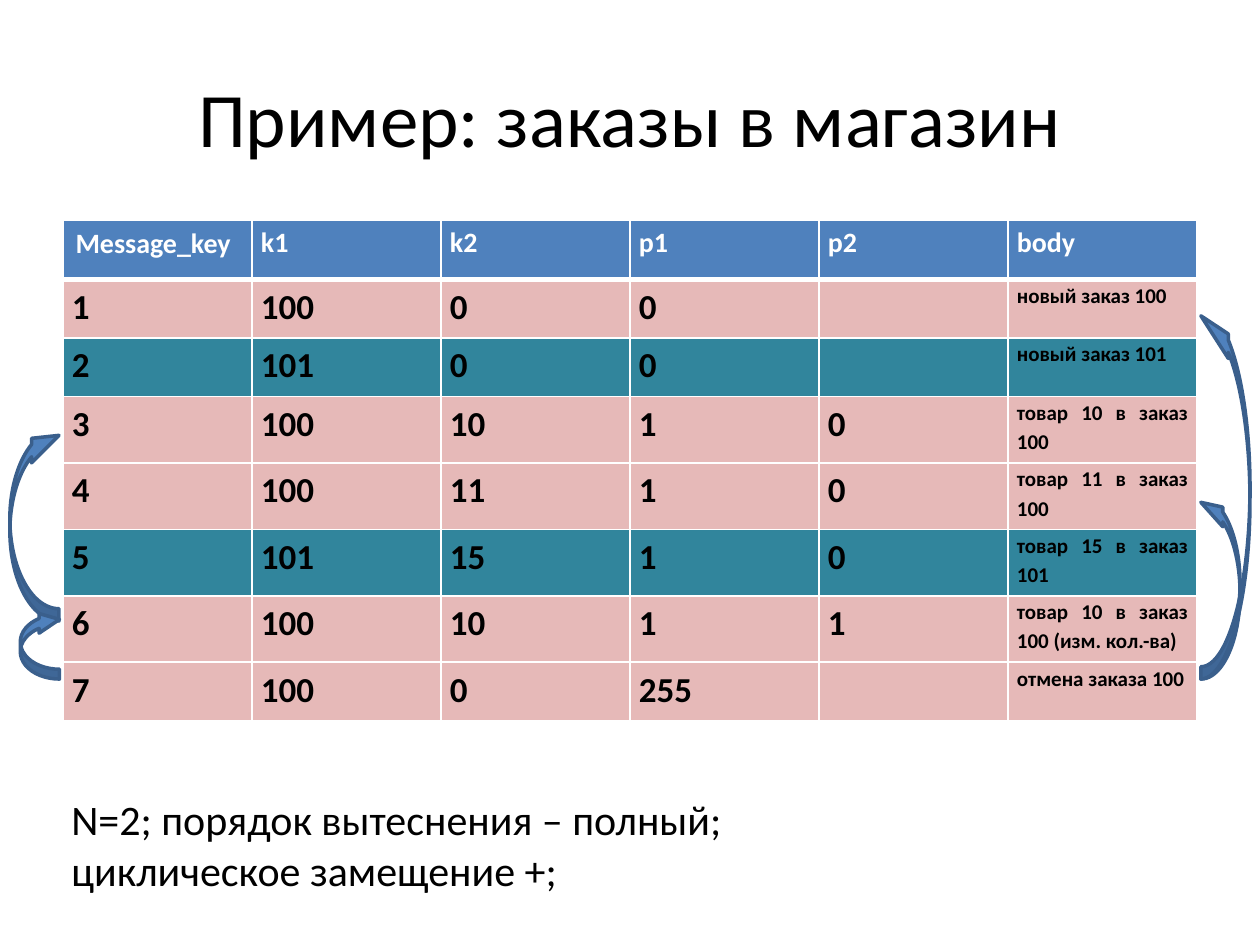
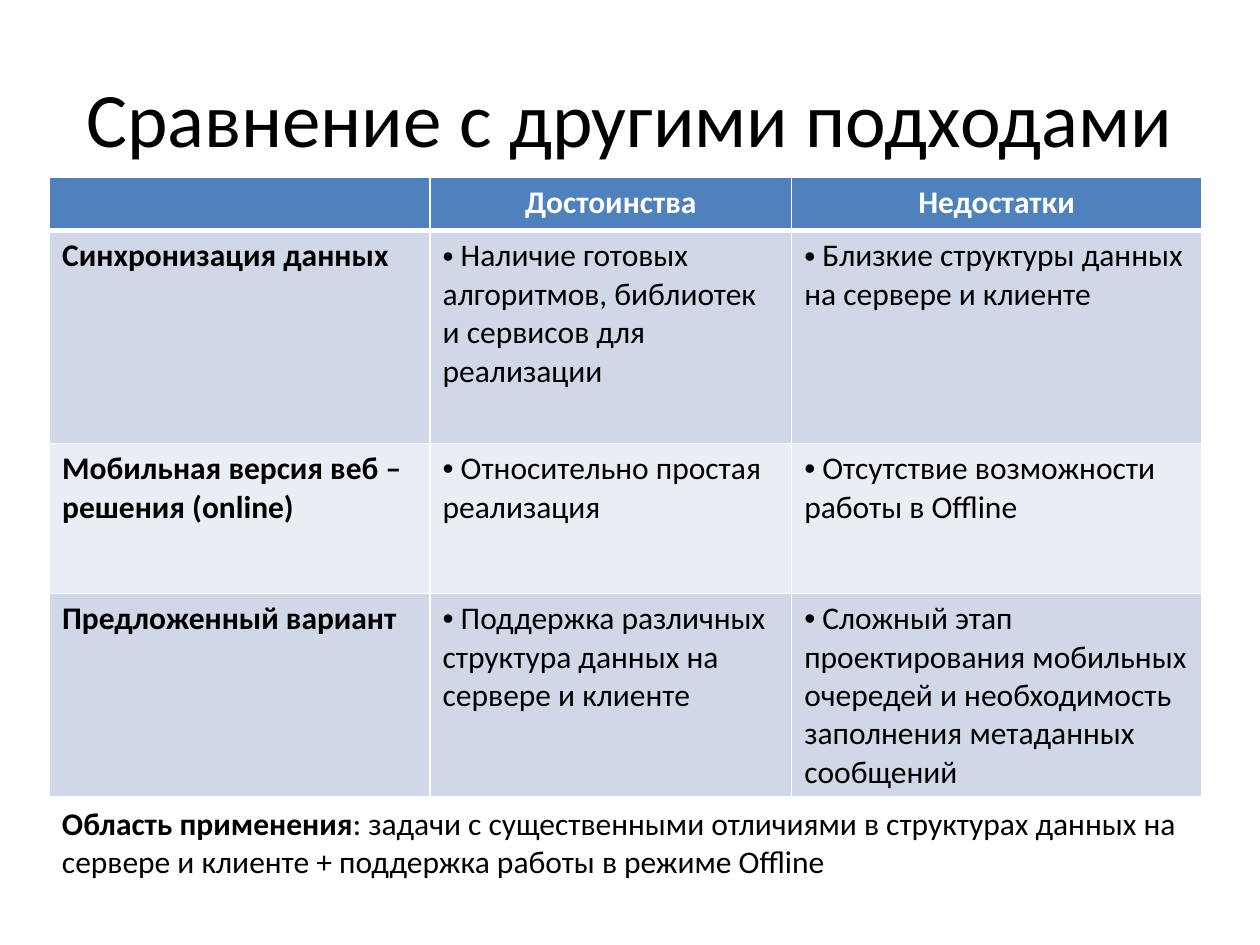
from lxml.etree import SubElement
from pptx import Presentation
from pptx.dml.color import RGBColor
from pptx.enum.shapes import MSO_SHAPE
from pptx.enum.text import MSO_ANCHOR, PP_ALIGN
from pptx.oxml.ns import qn
from pptx.util import Cm, Pt

FONT = "Calibri"
COLORS = {
    "text": "000000",
    "white": "FFFFFF",
    "accent": "4F81BD",
    "arrow_line": "3A5F8C",
    "order_100": "E6B9B8",
    "order_101": "31859C",
    "band_dark": "D0D8E8",
    "band_light": "E9EDF4",
}

ORDER_HEADS = ["Message_key", "k1", "k2", "p1", "p2", "body"]
ORDERS = [
    ["1", "100", "0", "0", "", "новый заказ 100"],
    ["2", "101", "0", "0", "", "новый заказ 101"],
    ["3", "100", "10", "1", "0", "товар 10 в заказ 100"],
    ["4", "100", "11", "1", "0", "товар 11 в заказ 100"],
    ["5", "101", "15", "1", "0", "товар 15 в заказ 101"],
    ["6", "100", "10", "1", "1", "товар 10 в заказ 100 (изм. кол.-ва)"],
    ["7", "100", "0", "255", "", "отмена заказа 100"],
]
ORDER_ROWS = [1.18] * 3 + [1.34] * 4 + [1.18]

# left, top, width, height, third adjustment, on the right side of the table
ARROWS = [
    (0.2, 8.53, 0.99, 3.99, 0.558, False),
    (24.21, 9.93, 0.79, 3.76, 0.558, True),
    (24.21, 6.12, 0.99, 7.57, 0.558, True),
    (0.41, 12.29, 0.79, 1.4, 0.52, False),
]

APPROACH_HEADS = ["", "Достоинства", "Недостатки"]
APPROACHES = [
    ["Синхронизация данных",
     "Наличие готовых алгоритмов, библиотек и сервисов для реализации",
     "Близкие структуры данных на сервере и клиенте"],
    ["Мобильная версия веб – решения (online)",
     "Относительно простая реализация",
     "Отсутствие возможности работы в Offline"],
    ["Предложенный вариант",
     "Поддержка различных структура данных на сервере и клиенте",
     "Сложный этап проектирования мобильных очередей и необходимость "
     "заполнения метаданных сообщений"],
]


def rgb(name):
    return RGBColor.from_string(COLORS[name])


def add_run(p, text, size, color="text", bold=False):
    r = p.add_run()
    r.text = text
    r.font.name = FONT
    r.font.size = Pt(size)
    r.font.bold = bold
    r.font.color.rgb = rgb(color)


def add_textbox(s, box, wrap):
    tf = s.shapes.add_textbox(*map(Cm, box)).text_frame
    tf.word_wrap = wrap
    return tf


def add_title(s, text):
    tf = add_textbox(s, (1.27, 0.76, 22.86, 3.18), True)
    tf.vertical_anchor = MSO_ANCHOR.MIDDLE
    p = tf.paragraphs[0]
    p.alignment = PP_ALIGN.CENTER
    add_run(p, text, 44)


def add_note(s, box, size, lines):
    """Each line is a list of (text, bold) runs."""
    p = add_textbox(s, box, False).paragraphs[0]
    for i, line in enumerate(lines):
        if i:
            p.add_line_break()
        for text, bold in line:
            add_run(p, text, size, bold=bold)


def style_cell(cell, row, fill):
    """White borders, thicker under the header row, and a solid fill."""
    tc_pr = cell._tc.get_or_add_tcPr()
    widths = {"L": 1, "R": 1, "T": 3 if row == 1 else 1, "B": 3 if row == 0 else 1}
    for side, width in widths.items():
        ln = SubElement(tc_pr, qn(f"a:ln{side}"), w=str(Pt(width)))
        solid = SubElement(ln, qn("a:solidFill"))
        SubElement(solid, qn("a:srgbClr"), val=COLORS["white"])
    cell.fill.solid()
    cell.fill.fore_color.rgb = rgb(fill)


def add_grid(s, left, top, col_widths, row_heights, fills):
    """Table with one fill name per row."""
    table = s.shapes.add_table(
        len(row_heights), len(col_widths), Cm(left), Cm(top),
        Cm(sum(col_widths)), Cm(sum(row_heights))).table
    table.horz_banding = False
    for col, width in zip(table.columns, col_widths):
        col.width = Cm(width)
    for i, (row, height) in enumerate(zip(table.rows, row_heights)):
        row.height = Cm(height)
        for cell in row.cells:
            style_cell(cell, i, fills[i])
    return table


def add_bullet(p):
    p_pr = p._p.get_or_add_pPr()
    p_pr.set("marL", "0")
    p_pr.set("indent", "0")
    SubElement(p_pr, qn("a:buFont"), typeface="Arial")
    SubElement(p_pr, qn("a:buChar"), char="•")


def add_orders_table(s, left, top):
    fills = ["accent"] + [f"order_{order[1]}" for order in ORDERS]
    table = add_grid(s, left, top, [3.81] * 6, ORDER_ROWS, fills)
    for i, texts in enumerate([ORDER_HEADS] + ORDERS):
        for j, text in enumerate(texts):
            if not text:
                continue
            cell = table.cell(i, j)
            p = cell.text_frame.paragraphs[0]
            if (i, j) != (0, 0):
                cell.margin_left = cell.margin_right = Cm(0.18)
                cell.margin_top = cell.margin_bottom = 0
                p.alignment = PP_ALIGN.JUSTIFY
                p.line_spacing = 1.15
            if i == 0:
                add_run(p, text, 16, "white", True)
            else:
                add_run(p, text, 12 if j == 5 else 20, bold=True)


def add_approaches_table(s, left, top):
    fills = ["accent", "band_dark", "band_light", "band_dark"]
    table = add_grid(s, left, top, [7.67, 7.29, 8.26], [1.07, 4.29, 3.02, 4.11], fills)
    for i, texts in enumerate([APPROACH_HEADS] + APPROACHES):
        for j, text in enumerate(texts):
            if not text:
                continue
            p = table.cell(i, j).text_frame.paragraphs[0]
            if i == 0:
                p.alignment = PP_ALIGN.CENTER
                add_run(p, text, 18, "white", True)
            elif j == 0:
                add_run(p, text, 18, bold=True)
            else:
                add_bullet(p)
                add_run(p, " " + text, 18)


def add_replacement_arrow(s, box, bend, on_right):
    """Curved arrow from a later message up to the one it replaces."""
    sp = s.shapes.add_shape(MSO_SHAPE.CURVED_RIGHT_ARROW, *map(Cm, box))
    for i, value in enumerate((0.25, 0.5, bend)):
        sp.adjustments[i] = value
    xfrm = sp._element.spPr.find(qn("a:xfrm"))
    xfrm.set("flipV", "1")
    if on_right:
        xfrm.set("flipH", "1")
    sp.shadow.inherit = False
    sp.fill.solid()
    sp.fill.fore_color.rgb = rgb("accent")
    sp.line.color.rgb = rgb("arrow_line")
    sp.line.width = Pt(2)


def build_orders_slide(s):
    add_title(s, "Пример: заказы в магазин")
    add_orders_table(s, 1.27, 4.45)
    add_note(s, (1.19, 15.88, 14.61, 2.31), 24, [
        [("N=2; порядок вытеснения – полный;", False)],
        [("циклическое замещение +;", False)],
    ])
    for *box, bend, on_right in ARROWS:
        add_replacement_arrow(s, box, bend, on_right)


def build_comparison_slide(s):
    add_title(s, "Сравнение с другими подходами")
    add_approaches_table(s, 1, 3.58)
    add_note(s, (1, 16.08, 23.09, 1.8), 18, [
        [("Область применения", True),
         (": задачи с существенными отличиями в структурах данных на", False)],
        [("сервере и клиенте + поддержка работы в режиме Offline", False)],
    ])


def main():
    prs = Presentation()
    prs.slide_width, prs.slide_height = Cm(25.4), Cm(19.05)
    for build in (build_orders_slide, build_comparison_slide):
        build(prs.slides.add_slide(prs.slide_layouts[6]))
    prs.save("out.pptx")


if __name__ == "__main__":
    main()
